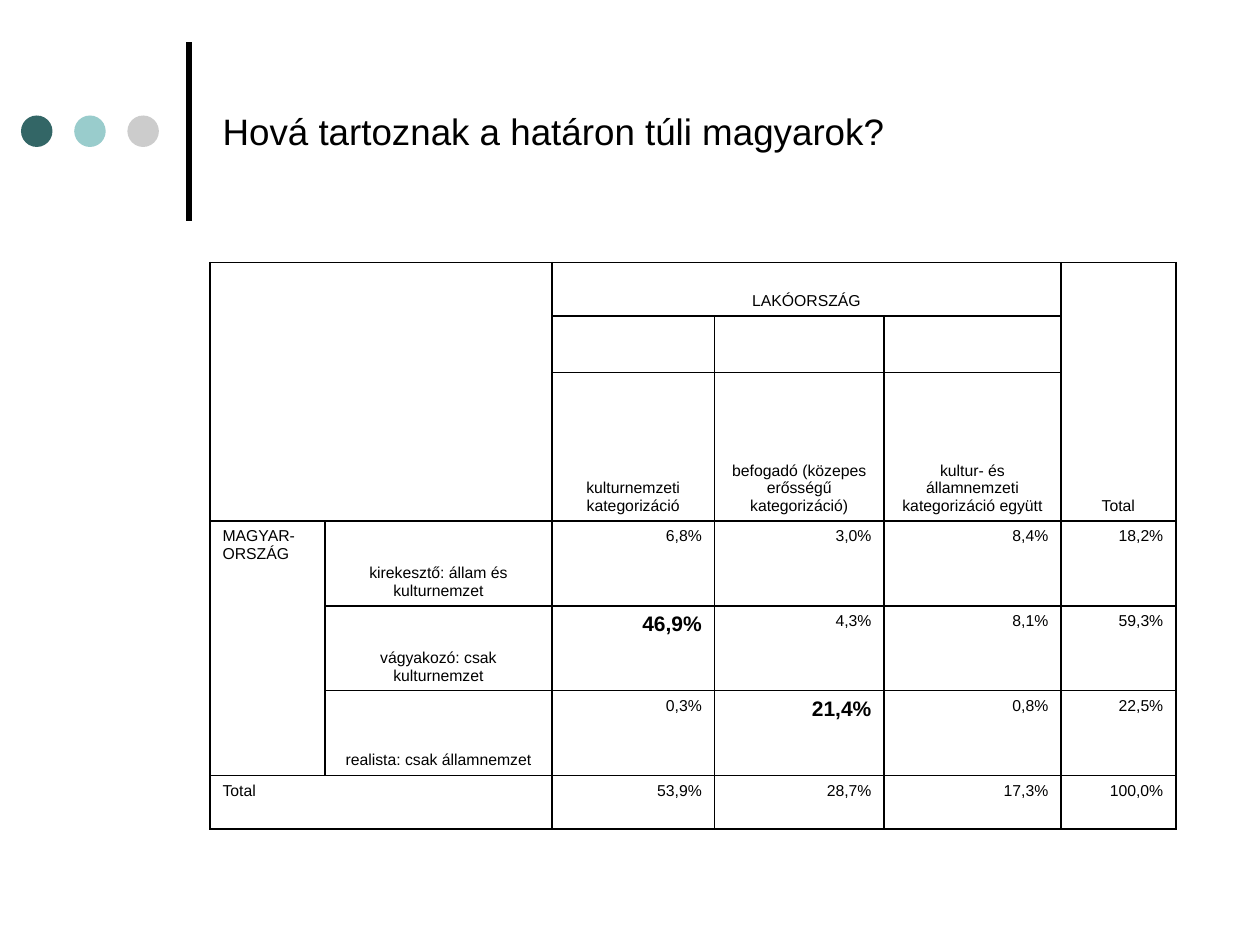
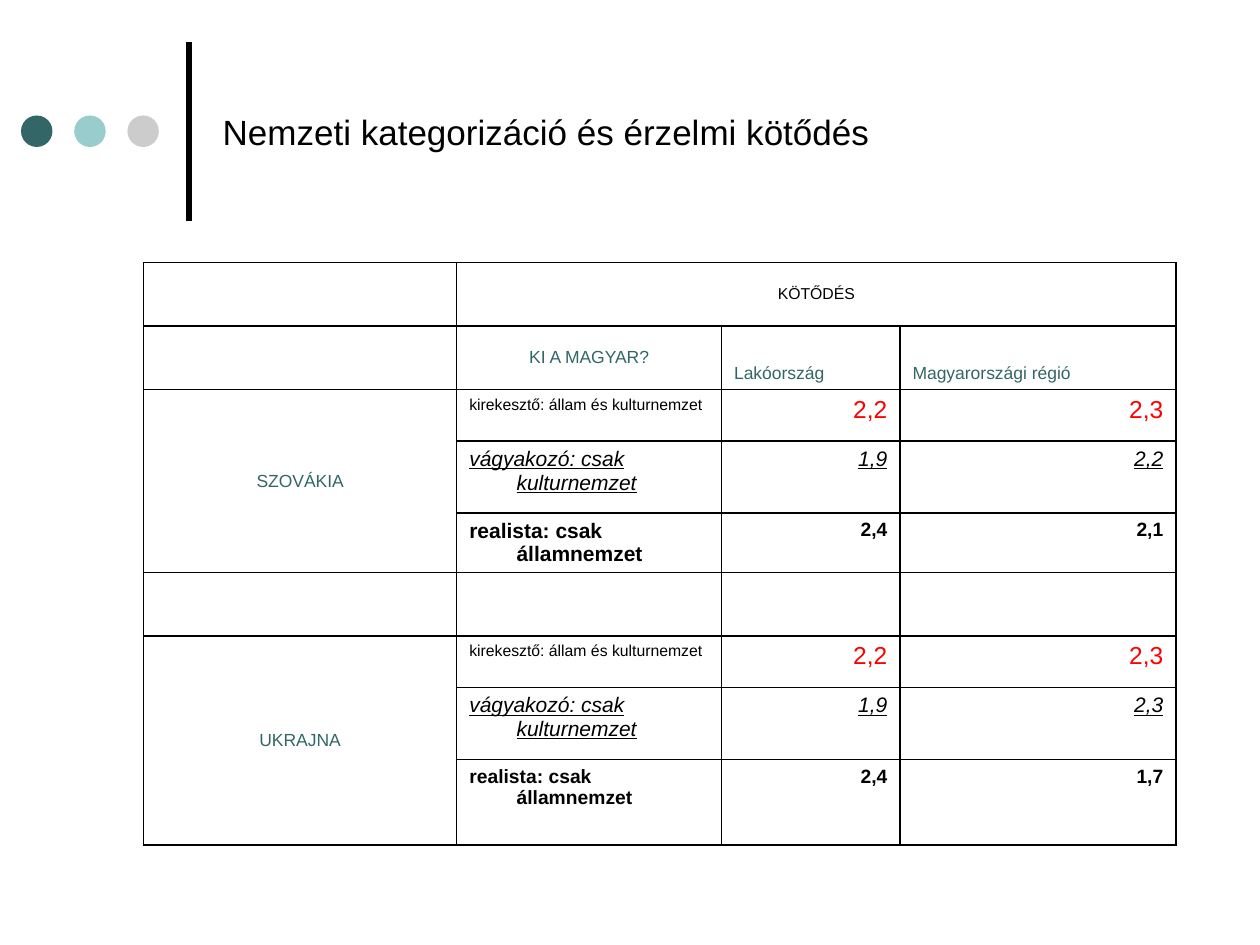
from dataclasses import dataclass, replace

from lxml.etree import SubElement
from pptx import Presentation
from pptx.dml.color import RGBColor
from pptx.enum.shapes import MSO_CONNECTOR, MSO_SHAPE
from pptx.enum.text import MSO_ANCHOR, MSO_AUTO_SIZE, PP_ALIGN
from pptx.oxml import parse_xml
from pptx.oxml.ns import nsdecls, qn
from pptx.slide import Slide
from pptx.table import _Cell
from pptx.util import Pt

FONT = "Arial"
BLACK, TEAL, AQUA, GREY, RED = "000000", "336666", "99CCCC", "CCCCCC", "FF0000"
TABLE_TOP = 150


@dataclass(frozen=True)
class CellStyle:
    size: float = 9
    color: str = BLACK
    bold: bool = False
    italic: bool = False
    underline: bool = False
    align: PP_ALIGN = PP_ALIGN.LEFT
    anchor: MSO_ANCHOR = MSO_ANCHOR.TOP
    hanging: float = 0


@dataclass(frozen=True)
class Entry:
    text: str
    style: CellStyle


@dataclass(frozen=True)
class Span:
    row: int
    col: int
    last_row: int
    last_col: int


@dataclass(frozen=True)
class CrossTable:
    left: float
    widths: list[float]
    heights: list[float]
    rows: list[list[Entry | None]]
    spans: list[Span]


def rgb(color: str) -> RGBColor:
    return RGBColor.from_string(color)


def write(paragraph, text: str, style: CellStyle) -> None:
    paragraph.alignment = style.align
    run = paragraph.add_run()
    run.text = text
    font = run.font
    font.name, font.size = FONT, Pt(style.size)
    font.bold, font.italic, font.underline = style.bold, style.italic, style.underline
    font.color.rgb = rgb(style.color)


def add_ornament(slide: Slide) -> None:
    """Three dots and the upright bar beside the title."""
    bar = slide.shapes.add_connector(
        MSO_CONNECTOR.STRAIGHT, Pt(108), Pt(126), Pt(108), Pt(24))
    bar.line.color.rgb = rgb(BLACK)
    bar.line.width = Pt(3)
    SubElement(bar.element.spPr, qn("a:effectLst"))
    for i, color in enumerate((TEAL, AQUA, GREY)):
        dot = slide.shapes.add_shape(
            MSO_SHAPE.OVAL, Pt(12 + 30.4 * i), Pt(66), Pt(18), Pt(18))
        dot.shadow.inherit = False
        dot.fill.solid()
        dot.fill.fore_color.rgb = rgb(color)
        dot.line.fill.background()


def add_titled_slide(prs, heading: str, size: float) -> Slide:
    slide = prs.slides.add_slide(prs.slide_layouts.get_by_name("Title Only"))
    title = slide.shapes.title
    title.left, title.top, title.width, title.height = Pt(120), Pt(15), Pt(552), Pt(120)
    frame = title.text_frame
    frame.word_wrap = True
    frame.auto_size = MSO_AUTO_SIZE.NONE
    frame.vertical_anchor = MSO_ANCHOR.MIDDLE
    write(frame.paragraphs[0], heading, CellStyle(size))
    add_ornament(slide)
    return slide


def outline(cell: _Cell) -> None:
    cell.fill.background()
    properties = cell._tc.get_or_add_tcPr()
    for i, side in enumerate("LRTB"):
        properties.insert(i, parse_xml(
            f'<a:ln{side} {nsdecls("a")} w="{Pt(1)}"><a:solidFill>'
            f'<a:srgbClr val="{BLACK}"/></a:solidFill></a:ln{side}>'))


def fill_cell(cell: _Cell, entry: Entry) -> None:
    style = entry.style
    cell.vertical_anchor = style.anchor
    paragraph = cell.text_frame.paragraphs[0]
    write(paragraph, entry.text, style)
    if style.hanging:
        properties = paragraph._p.get_or_add_pPr()
        properties.set("marL", str(Pt(style.hanging)))
        properties.set("indent", str(Pt(-style.hanging)))


def add_cross_table(slide: Slide, spec_table: CrossTable) -> None:
    widths, heights = spec_table.widths, spec_table.heights
    table = slide.shapes.add_table(
        len(heights), len(widths), Pt(spec_table.left), Pt(TABLE_TOP),
        Pt(sum(widths)), Pt(sum(heights))).table
    table.first_row = table.horz_banding = False
    for column, width in zip(table.columns, widths):
        column.width = Pt(width)
    for row, height in zip(table.rows, heights):
        row.height = Pt(height)
    for r, entries in enumerate(spec_table.rows):
        for c, entry in enumerate(entries):
            outline(table.cell(r, c))
            if entry:
                fill_cell(table.cell(r, c), entry)
    for span in spec_table.spans:
        table.cell(span.row, span.col).merge(table.cell(span.last_row, span.last_col))


PLAIN = CellStyle()
LABEL = CellStyle(align=PP_ALIGN.CENTER, anchor=MSO_ANCHOR.BOTTOM)
FIGURE = CellStyle(align=PP_ALIGN.RIGHT)
PEAK = replace(FIGURE, size=12, bold=True)
PEAKS = ("46,9%", "21,4%")

HANGING = CellStyle(hanging=27)
BOND_HEAD = replace(HANGING, align=PP_ALIGN.CENTER, anchor=MSO_ANCHOR.MIDDLE)
TEAL_HEAD = replace(BOND_HEAD, size=10, color=TEAL)
REGION_HEAD = replace(TEAL_HEAD, align=PP_ALIGN.LEFT, anchor=MSO_ANCHOR.BOTTOM)
LONGING = replace(HANGING, size=12, italic=True, underline=True)
REALIST = replace(HANGING, size=11, bold=True)
EXCLUDING, YEARNING, REALISTIC = (
    "kirekesztő: állam és kulturnemzet",
    "vágyakozó: csak kulturnemzet",
    "realista: csak államnemzet",
)


def shares(*values: str) -> list[Entry]:
    return [Entry(value, PEAK if value in PEAKS else FIGURE) for value in values]


def bond_row(label: str, label_style: CellStyle, figure_style: CellStyle,
             *values: str) -> list[Entry]:
    right = replace(figure_style, align=PP_ALIGN.RIGHT)
    return [Entry(label, label_style), *(Entry(value, right) for value in values)]


def country_rows(country: str, excluding: tuple[str, str], yearning: tuple[str, str],
                 realistic: tuple[str, str], realist_size: float) -> list[list[Entry | None]]:
    return [
        [Entry(country, TEAL_HEAD),
         *bond_row(EXCLUDING, HANGING, replace(HANGING, size=14, color=RED), *excluding)],
        [None, *bond_row(YEARNING, LONGING, LONGING, *yearning)],
        [None, *bond_row(REALISTIC, replace(REALIST, size=realist_size),
                         REALIST, *realistic)],
    ]


BELONGING = CrossTable(
    left=120,
    widths=[65.7, 129.7, 92.9, 96.9, 101.1, 65.7],
    heights=[30.5, 32.5, 84.8, 48.5, 48.5, 48.5, 30.5],
    rows=[
        [None, None, Entry("LAKÓORSZÁG", LABEL), None, None, Entry("Total", LABEL)],
        [None] * 6,
        [None, None,
         Entry("kulturnemzeti kategorizáció", LABEL),
         Entry("befogadó (közepes erősségű kategorizáció)", LABEL),
         Entry("kultur- és államnemzeti kategorizáció együtt", LABEL), None],
        [Entry("MAGYAR-ORSZÁG", PLAIN), Entry(EXCLUDING, LABEL),
         *shares("6,8%", "3,0%", "8,4%", "18,2%")],
        [None, Entry(YEARNING, LABEL), *shares("46,9%", "4,3%", "8,1%", "59,3%")],
        [None, Entry(REALISTIC, LABEL), *shares("0,3%", "21,4%", "0,8%", "22,5%")],
        [Entry("Total", PLAIN), None, *shares("53,9%", "28,7%", "17,3%", "100,0%")],
    ],
    spans=[Span(0, 0, 2, 1), Span(0, 2, 0, 4), Span(0, 5, 2, 5),
           Span(3, 0, 5, 0), Span(6, 0, 6, 1)],
)

ATTACHMENT = CrossTable(
    left=82,
    widths=[179, 151.3, 102, 157.7],
    heights=[36.3, 36.3, 29.5, 41, 34, 36.3, 29.5, 41, 49],
    rows=[
        [None, Entry("KÖTŐDÉS", BOND_HEAD), None, None],
        [None, Entry("KI A MAGYAR?", TEAL_HEAD), Entry("Lakóország", REGION_HEAD),
         Entry("Magyarországi régió", REGION_HEAD)],
        *country_rows("SZOVÁKIA", ("2,2", "2,3"), ("1,9", "2,2"), ("2,4", "2,1"), 12),
        [None] * 4,
        *country_rows("UKRAJNA", ("2,2", "2,3"), ("1,9", "2,3"), ("2,4", "1,7"), 11),
    ],
    spans=[Span(0, 1, 0, 3), Span(2, 0, 4, 0), Span(6, 0, 8, 0)],
)


def main() -> None:
    prs = Presentation()
    prs.slide_width, prs.slide_height = Pt(720), Pt(540)
    belonging = add_titled_slide(prs, "Hová tartoznak a határon túli magyarok?", 21)
    add_cross_table(belonging, BELONGING)
    attachment = add_titled_slide(prs, "Nemzeti kategorizáció és érzelmi kötődés", 20)
    add_cross_table(attachment, ATTACHMENT)
    prs.save("out.pptx")


if __name__ == "__main__":
    main()
